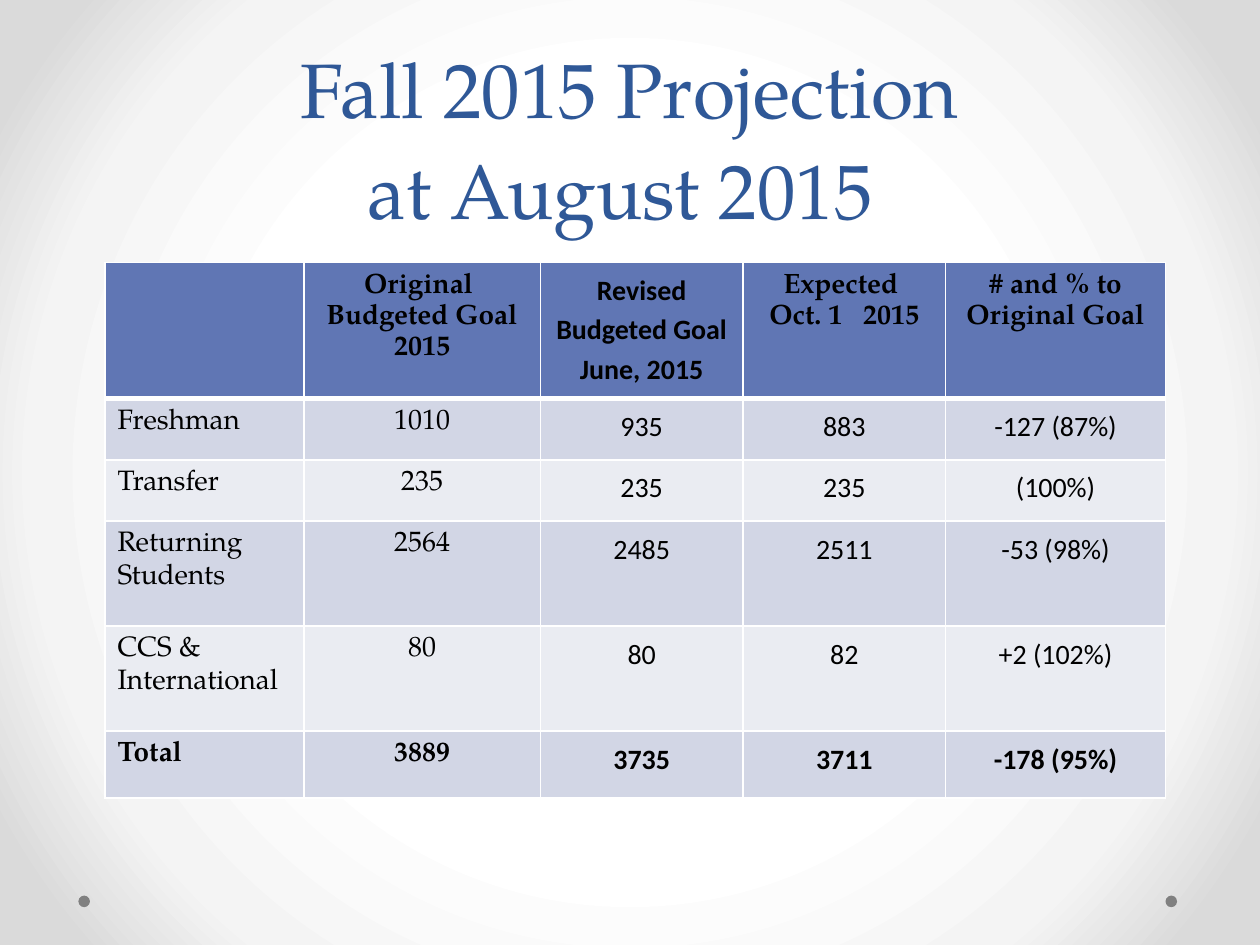
from pptx import Presentation
from pptx.dml.color import RGBColor
from pptx.enum.shapes import MSO_SHAPE
from pptx.enum.text import MSO_ANCHOR, PP_ALIGN
from pptx.oxml import parse_xml
from pptx.oxml.ns import nsdecls, qn
from pptx.util import Pt

SERIF, SANS = "TeX Gyre Pagella", "Calibri"
HEAD = ["", "Original \nBudgeted Goal\n2015", "Revised\nBudgeted Goal\nJune, 2015",
        "Expected \nOct. 1   2015", "# and % to Original Goal"]
BODY = [
    ["Freshman", "1010", "935", "883", "-127 (87%)"],
    ["Transfer", "235", "235", "235", "(100%)"],
    ["Returning Students", "2564", "2485", "2511", "-53 (98%)"],
    ["CCS & International", "80", "80", "82", "+2 (102%)"],
    ["Total", "3889", "3735", "3711", "-178 (95%)"],
]
COLS = [113.6, 135.2, 115.8, 115.8, 125.6]
ROWS = [77.8, 35, 35, 60, 60, 38.2]


def tint(code):
    return RGBColor.from_string(code)


class Deck:
    blue, ink, dot = "2F5897", "000000", "808080"
    top, bands = "6076B4", ("EAECF2", "D2D6E5")

    def __init__(self, wide, high):
        self.file = Presentation()
        self.file.slide_width, self.file.slide_height = Pt(wide), Pt(high)
        self.slide = self.file.slides.add_slide(self.file.slide_layouts[6])

    def glow(self, stops):
        self.slide.background.fill.gradient()
        grad = next(self.slide.element.iter(qn("a:gradFill")))
        marks = "".join(f'<a:gs pos="{at * 1000}"><a:srgbClr val="{code}"/></a:gs>'
                        for at, code in stops)
        grad.getparent().replace(grad, parse_xml(
            f'<a:gradFill {nsdecls("a")} rotWithShape="1"><a:gsLst>{marks}</a:gsLst>'
            '<a:path path="circle"><a:fillToRect l="50000" t="50000" r="50000" b="50000"/>'
            '</a:path></a:gradFill>'))

    def disc(self, left, top, size):
        disc = self.slide.shapes.add_shape(
            MSO_SHAPE.OVAL, Pt(left), Pt(top), Pt(size), Pt(size))
        disc.shadow.inherit = False
        disc.fill.solid()
        disc.fill.fore_color.rgb = tint(self.dot)
        disc.line.fill.background()

    def style(self, para, font, size, code, bold, align, lead):
        para.alignment, para.line_spacing = align, lead
        for run in para.runs:
            run.font.name, run.font.size, run.font.bold = font, Pt(size), bold
            run.font.color.rgb = tint(code)

    def title(self, text, left, top, wide, high):
        frame = self.slide.shapes.add_textbox(
            Pt(left), Pt(top), Pt(wide), Pt(high)).text_frame
        frame.word_wrap, frame.vertical_anchor = True, MSO_ANCHOR.BOTTOM
        para = frame.paragraphs[0]
        para.text = text
        self.style(para, SERIF, 44, self.blue, False, PP_ALIGN.CENTER, Pt(58))

    def edge(self, cell, row):
        props = cell._tc.get_or_add_tcPr()
        heavy = {(0, "B"), (1, "T")}
        for spot, side in enumerate("LRTB"):
            width = Pt(3 if (row, side) in heavy else 1)
            props.insert(spot, parse_xml(
                f'<a:ln{side} {nsdecls("a")} w="{width}"><a:solidFill>'
                f'<a:srgbClr val="FFFFFF"/></a:solidFill></a:ln{side}>'))

    def cell(self, cell, text, row, col):
        cell.text = text
        cell.fill.solid()
        cell.fill.fore_color.rgb = tint(self.bands[row % 2] if row else self.top)
        self.edge(cell, row)
        sans = col == 2 or (row and col > 2)
        align = PP_ALIGN.CENTER if col else PP_ALIGN.LEFT
        for para in cell.text_frame.paragraphs:
            self.style(para, SANS if sans else SERIF, 16, self.ink,
                       row in (0, len(BODY)), align, 1.15)

    def table(self, data, left, top, cols, rows):
        grid = self.slide.shapes.add_table(
            len(rows), len(cols), Pt(left), Pt(top), Pt(sum(cols)), Pt(sum(rows))).table
        for part, wide in zip(grid.columns, cols):
            part.width = Pt(wide)
        for part, high in zip(grid.rows, rows):
            part.height = Pt(high)
        for row, line in enumerate(data):
            for col, text in enumerate(line):
                self.cell(grid.cell(row, col), text, row, col)


def main():
    deck = Deck(720, 540)
    deck.glow([(50, "FFFFFF"), (76, "F4F4F4"), (92, "DADADA")])
    for left in (666, 44.8):
        deck.disc(left, 511.8, 6.6)
    deck.title("Fall 2015 Projection\vat August 2015 ", 36, 12, 648, 126)
    deck.table([HEAD] + BODY, 60, 150, COLS, ROWS)
    deck.file.save("out.pptx")


if __name__ == "__main__":
    main()
